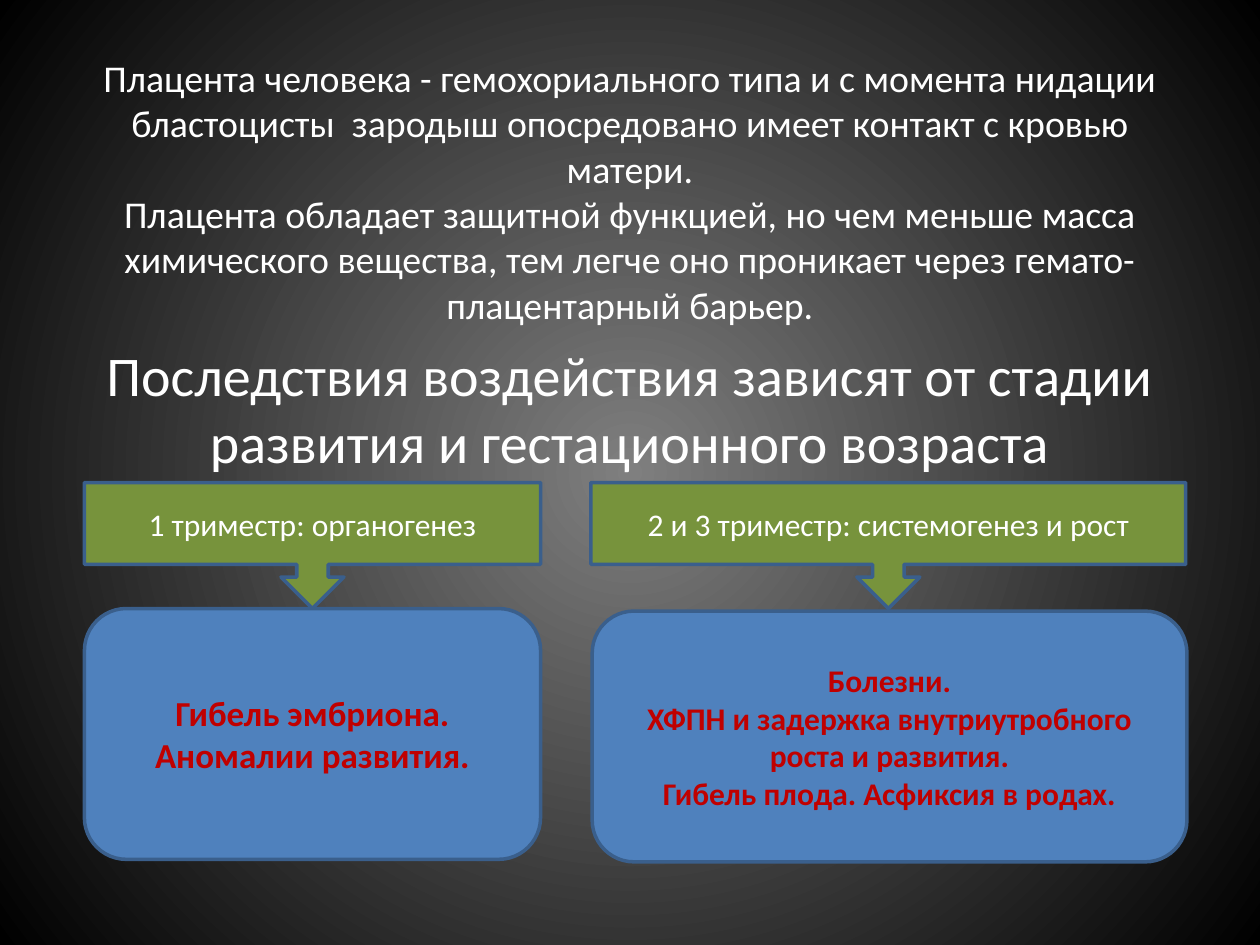
from dataclasses import dataclass
from lxml.etree import SubElement
from pptx import Presentation
from pptx.dml.color import RGBColor
from pptx.enum.shapes import MSO_SHAPE as SHAPE
from pptx.enum.text import MSO_ANCHOR as ANCHOR, PP_ALIGN as ALIGN
from pptx.oxml.ns import qn
from pptx.slide import Slide
from pptx.util import Inches, Pt


def rgb(value):
    return RGBColor.from_string(value)


@dataclass
class Deck:
    """Draws styled elements on the current slide."""
    s: Slide
    font: str = "Calibri"
    light: str = "FFFFFF"
    accent: str = "C00000"
    border: str = "3A5F8C"

    def background(self, center, edge):
        fill = self.s.background.fill
        fill.gradient()
        for stop, color, position in zip(fill.gradient_stops, (center, edge), (0, 1)):
            stop.color.rgb = rgb(color)
            stop.position = position
        lin = next(self.s._element.iter(qn("a:lin")))
        grad = lin.getparent()
        grad.remove(lin)
        radial = SubElement(grad, qn("a:path"), {"path": "circle"})
        SubElement(radial, qn("a:fillToRect"), dict.fromkeys("ltrb", "50000"))

    def set_text(self, sp, text, size, color, bold=False, anchor=ANCHOR.MIDDLE):
        tf = sp.text_frame
        tf.word_wrap = True
        tf.vertical_anchor = anchor
        tf.text = text
        for p in tf.paragraphs:
            p.alignment = ALIGN.CENTER
            for r in p.runs:
                r.font.name = self.font
                r.font.size = Pt(size)
                r.font.bold = bold
                r.font.color.rgb = rgb(color)

    def text(self, box, text, size, anchor):
        sp = self.s.shapes.add_textbox(*map(Inches, box))
        self.set_text(sp, text, size, self.light, anchor=anchor)

    def shape(self, kind, box, fill, text, size, color, bold=False):
        sp = self.s.shapes.add_shape(kind, *map(Inches, box))
        sp.shadow.inherit = False
        sp.fill.solid()
        sp.fill.fore_color.rgb = rgb(fill)
        sp.line.color.rgb = rgb(self.border)
        sp.line.width = Pt(2)
        self.set_text(sp, text, size, color, bold)

    def callout(self, box, text):
        self.shape(SHAPE.DOWN_ARROW_CALLOUT, box, "77933C", text, 18, self.light)

    def card(self, box, text, size):
        self.shape(SHAPE.ROUNDED_RECTANGLE, box, "4F81BD", text, size, self.accent, True)


def main():
    prs = Presentation()
    prs.slide_width, prs.slide_height = Inches(10), Inches(7.5)
    deck = Deck(prs.slides.add_slide(prs.slide_layouts[6]))
    deck.background("7F7F7F", "000000")
    deck.text(
        (0.5, 0.3, 9, 2.43),
        "Плацента человека - гемохориального типа и с момента нидации "
        "бластоцисты  зародыш опосредовано имеет контакт с кровью матери.\v"
        "Плацента обладает защитной функцией, но чем меньше масса химического "
        "вещества, тем легче оно проникает через гемато-плацентарный барьер.",
        21.6, ANCHOR.MIDDLE)
    deck.text(
        (0.5, 2.65, 9, 4.49),
        "Последствия воздействия зависят от стадии развития и гестационного возраста",
        32, ANCHOR.TOP)

    stages = [
        (0.67, 3.62, "1 триместр: органогенез", 0.67, 4.83, 20,
         ["Гибель эмбриона.", "Аномалии развития."]),
        (4.69, 4.72, "2 и 3 триместр: системогенез и рост", 4.7, 4.85, 18,
         ["Болезни.", "ХФПН и задержка внутриутробного роста и развития.",
          "Гибель плода. Асфиксия в родах."]),
    ]
    for left, width, stage, card_left, card_top, size, effects in stages:
        deck.callout((left, 3.83, width, 1), stage)
        deck.card((card_left, card_top, width, 1.99), "\n".join(effects), size)
    prs.save("out.pptx")


if __name__ == "__main__":
    main()
